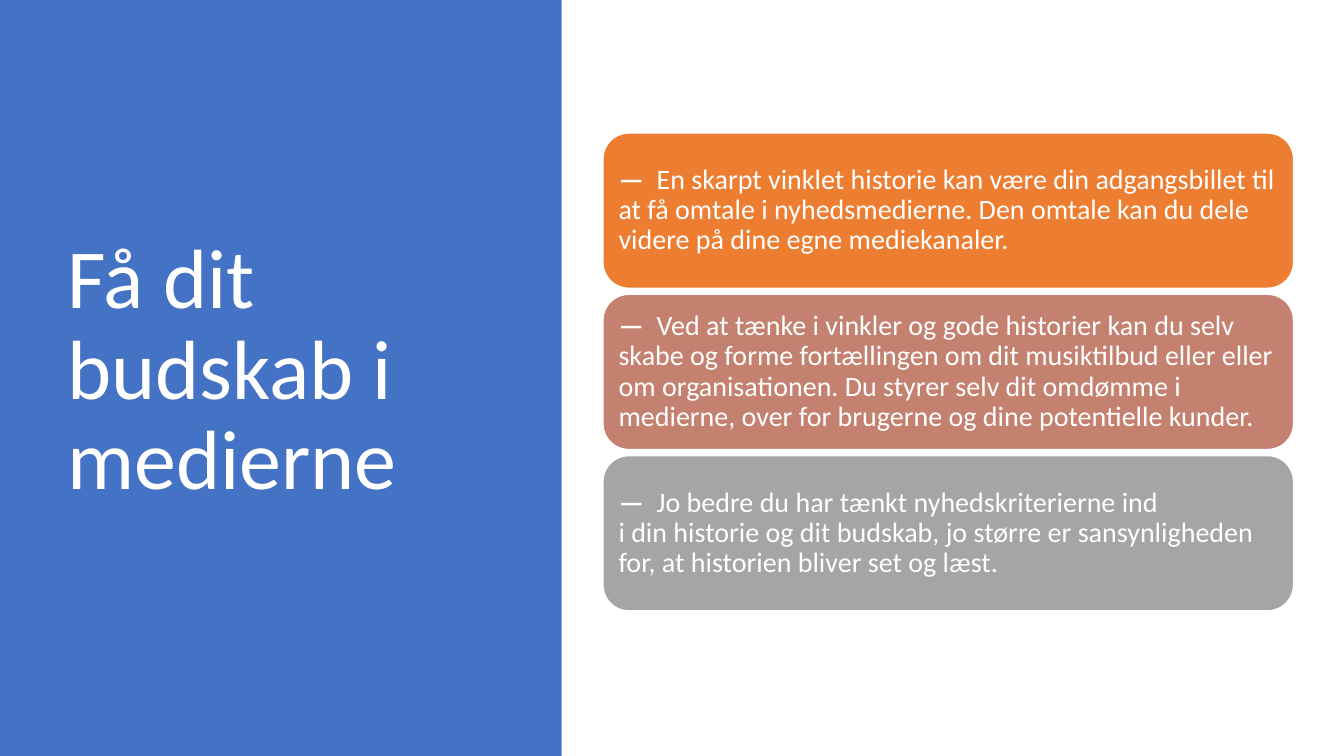
import dataclasses

import pptx
import pptx.dml.color
import pptx.enum.shapes
import pptx.enum.text
import pptx.util

SLIDE_WIDTH = pptx.util.Inches(13.33)
SLIDE_HEIGHT = pptx.util.Inches(7.5)
TITLE_ONLY_LAYOUT = 5
WHITE = "FFFFFF"
DASH = "—  "
CARD_INSET = pptx.util.Inches(0.08)


@dataclasses.dataclass(frozen=True)
class Area:
    """A rectangle given in shares of the slide's width and height."""

    left: float
    top: float
    width: float
    height: float

    def bounds(self) -> dict[str, int]:
        return {
            "left": round(self.left * SLIDE_WIDTH),
            "top": round(self.top * SLIDE_HEIGHT),
            "width": round(self.width * SLIDE_WIDTH),
            "height": round(self.height * SLIDE_HEIGHT),
        }


@dataclasses.dataclass(frozen=True)
class Card:
    fill: str
    lines: tuple[str, ...]


PANEL_AREA = Area(0, 0, 5.57 / 13.33, 1)
TITLE_AREA = Area(0.57 / 13.33, 0.68 / 7.5, 4.16 / 13.33, 6.02 / 7.5)
FIRST_CARD_AREA = Area(5.98 / 13.33, 1.32 / 7.5, 6.85 / 13.33, 1.54 / 7.5)
CARD_PITCH = 1.6 / 7.5

CARDS = (
    Card("ED7D31", (
        "En skarpt vinklet historie kan være din adgangsbillet til at få omtale "
        "i nyhedsmedierne. Den omtale kan du dele videre på dine egne mediekanaler.",
    )),
    Card("C48170", (
        "Ved at tænke i vinkler og gode historier kan du selv skabe og forme "
        "fortællingen om dit musiktilbud eller eller om organisationen. Du styrer selv "
        "dit omdømme i medierne, over for brugerne og dine potentielle kunder.",
    )),
    Card("A5A5A5", (
        "Jo bedre du har tænkt nyhedskriterierne ind",
        "i din historie og dit budskab, jo større er sansynligheden for, "
        "at historien bliver set og læst.",
    )),
)


def color(hex_value: str) -> pptx.dml.color.RGBColor:
    return pptx.dml.color.RGBColor.from_string(hex_value)


def set_attributes(target: object, values: dict[str, object]) -> None:
    for name, value in values.items():
        setattr(target, name, value)


def format_paragraph(paragraph, size: int) -> None:
    set_attributes(paragraph, {
        "alignment": pptx.enum.text.PP_ALIGN.LEFT,
        "line_spacing": 0.9,
    })
    for run in paragraph.runs:
        set_attributes(run.font, {"name": "Calibri", "size": pptx.util.Pt(size)})
        run.font.color.rgb = color(WHITE)


def format_frame(text_frame, inset: int | None = None) -> None:
    values = {
        "word_wrap": True,
        "auto_size": pptx.enum.text.MSO_AUTO_SIZE.NONE,
        "vertical_anchor": pptx.enum.text.MSO_ANCHOR.MIDDLE,
    }
    if inset is not None:
        for side in ("left", "top", "right", "bottom"):
            values[f"margin_{side}"] = inset
    set_attributes(text_frame, values)


def add_filled_shape(slide, kind, area: Area, fill: str):
    shape = slide.shapes.add_shape(kind, **area.bounds())
    shape.shadow.inherit = False
    shape.fill.solid()
    shape.fill.fore_color.rgb = color(fill)
    shape.line.fill.background()
    return shape


def add_title(slide, text: str) -> None:
    title = slide.shapes.title
    set_attributes(title, TITLE_AREA.bounds())
    title.text_frame.text = text
    format_frame(title.text_frame)
    format_paragraph(title.text_frame.paragraphs[0], 60)


def add_panel(slide) -> None:
    """Add the blue panel and place it behind the title."""
    rectangle = pptx.enum.shapes.MSO_SHAPE.RECTANGLE
    panel = add_filled_shape(slide, rectangle, PANEL_AREA, "4472C4")
    slide.shapes.title.element.addprevious(panel.element)


def add_card(slide, card: Card, row: int) -> None:
    area = dataclasses.replace(
        FIRST_CARD_AREA, top=FIRST_CARD_AREA.top + row * CARD_PITCH
    )
    rounded = pptx.enum.shapes.MSO_SHAPE.ROUNDED_RECTANGLE
    shape = add_filled_shape(slide, rounded, area, card.fill)
    shape.line.color.rgb = color(WHITE)
    shape.line.width = pptx.util.Pt(1)
    format_frame(shape.text_frame, CARD_INSET)

    paragraph = shape.text_frame.paragraphs[0]
    dash = paragraph.add_run()
    dash.text = DASH
    dash.font.bold = True
    for index, line in enumerate(card.lines):
        if index:
            paragraph.add_line_break()
        paragraph.add_run().text = line
    format_paragraph(paragraph, 20)


def main() -> None:
    presentation = pptx.Presentation()
    set_attributes(presentation, {
        "slide_width": SLIDE_WIDTH,
        "slide_height": SLIDE_HEIGHT,
    })
    layout = presentation.slide_layouts[TITLE_ONLY_LAYOUT]
    slide = presentation.slides.add_slide(layout)
    add_title(slide, "Få dit budskab i medierne")
    add_panel(slide)
    for row, card in enumerate(CARDS):
        add_card(slide, card, row)
    presentation.save("out.pptx")


if __name__ == "__main__":
    main()
